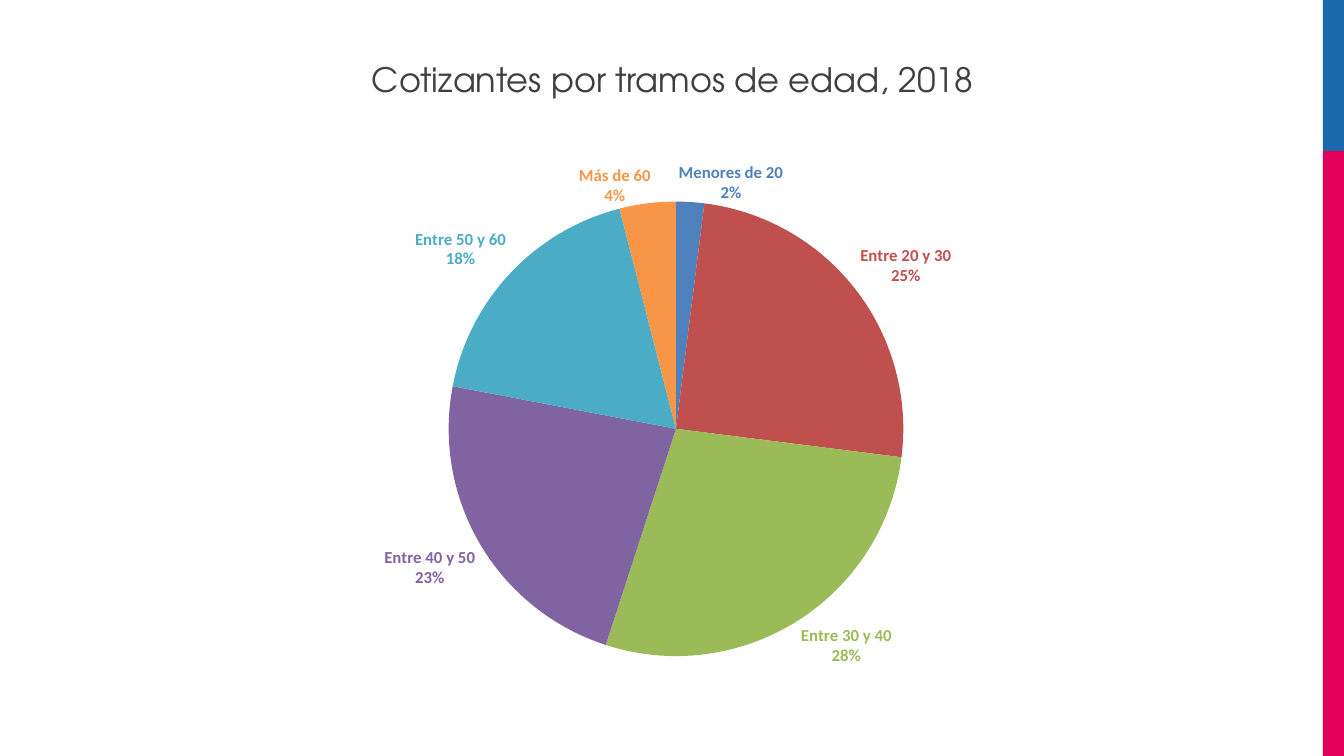
"""Build a slide with a pie chart of contributors by age bracket."""
from dataclasses import dataclass

from lxml import etree
from pptx import Presentation
from pptx import util as u
from pptx.chart import data as chart_data
from pptx.dml.color import RGBColor
from pptx.enum import chart as charts, shapes, text
from pptx.oxml import ns

COLORS = {
    "blue bar": "1A69AA", "pink bar": "E30058", "title": "404040",
    "blue": "4F81BD", "red": "C0504D", "green": "9BBB59",
    "purple": "8064A2", "teal": "4BACC6", "orange": "F79646",
}
CHART_WIDTH, CHART_HEIGHT = 9.45, 5.51
PIE_LEFT, PIE_TOP, PIE_SIZE = 2.51, 0.6, 4.51


@dataclass
class Bar:
    top: float
    height: float
    color: str


@dataclass
class Bracket:
    name: str
    percent: int
    color: str
    label_right: float = 0
    label_down: float = 0


BARS = [Bar(0, 1.5, "blue bar"), Bar(1.5, 6, "pink bar")]
BRACKETS = [
    Bracket("Menores de 20", 2, "blue", 0.4, 0.07),
    Bracket("Entre 20 y 30", 25, "red"),
    Bracket("Entre 30 y 40", 28, "green"),
    Bracket("Entre 40 y 50", 23, "purple"),
    Bracket("Entre 50 y 60", 18, "teal"),
    Bracket("Más de 60", 4, "orange", 0.04, 0.08),
]


def rgb(name: str) -> RGBColor:
    return RGBColor.from_string(COLORS[name])


def format_font(font, *, name: str, size: float, color: str, bold: bool = False) -> None:
    font.name = name
    font.size = u.Pt(size)
    font.bold = bold
    font.color.rgb = rgb(color)


def write_text(box, words: str, *, align=text.PP_ALIGN.CENTER, **font_format) -> None:
    frame = box.text_frame
    frame.word_wrap = True
    frame.vertical_anchor = text.MSO_ANCHOR.MIDDLE
    frame.margin_left = frame.margin_top = frame.margin_right = frame.margin_bottom = 0
    para = frame.paragraphs[0]
    para.alignment = align
    span = para.add_run()
    span.text = words
    format_font(span.font, **font_format)


def add_bar(page, bar: Bar) -> None:
    box = page.shapes.add_shape(
        shapes.MSO_SHAPE.RECTANGLE,
        u.Inches(13.12), u.Inches(bar.top), u.Inches(0.21), u.Inches(bar.height))
    box.shadow.inherit = False
    box.fill.solid()
    box.fill.fore_color.rgb = rgb(bar.color)
    box.line.fill.background()


def manual_layout(**settings):
    layout = etree.Element(ns.qn("c:layout"))
    manual = etree.SubElement(layout, ns.qn("c:manualLayout"))
    for tag, value in settings.items():
        etree.SubElement(manual, ns.qn(f"c:{tag}")).set("val", str(value))
    return layout


def place_plot(chart) -> None:
    plot_area = chart.plots[0]._element.getparent()
    for old_layout in plot_area.findall(ns.qn("c:layout")):
        plot_area.remove(old_layout)
    plot_area.insert(0, manual_layout(
        layoutTarget="inner", xMode="edge", yMode="edge",
        x=PIE_LEFT / CHART_WIDTH, y=PIE_TOP / CHART_HEIGHT,
        w=PIE_SIZE / CHART_WIDTH, h=PIE_SIZE / CHART_HEIGHT))


def format_slice(point, bracket: Bracket) -> None:
    point.format.fill.solid()
    point.format.fill.fore_color.rgb = rgb(bracket.color)
    point.format.line.fill.background()
    label = point.data_label
    format_font(label.font, name="Calibri", size=12, color=bracket.color, bold=True)
    label.position = charts.XL_LABEL_POSITION.OUTSIDE_END
    element = label._get_or_add_dLbl()
    for tag, value in {"showVal": "0", "showCatName": "1", "showPercent": "1"}.items():
        element.find(ns.qn(f"c:{tag}")).set("val", value)
    index = element.find(ns.qn("c:idx"))
    index.addnext(etree.Element(ns.qn("c:numFmt"), formatCode="0%", sourceLinked="0"))
    if bracket.label_right or bracket.label_down:
        index.addnext(manual_layout(x=bracket.label_right / CHART_WIDTH,
                                    y=bracket.label_down / CHART_HEIGHT))
    etree.SubElement(element, ns.qn("c:separator")).text = "\n"


def add_pie(page, brackets: list[Bracket]) -> None:
    figures = chart_data.CategoryChartData()
    figures.categories = [bracket.name for bracket in brackets]
    figures.add_series("Series 1", [bracket.percent for bracket in brackets])
    chart = page.shapes.add_chart(
        charts.XL_CHART_TYPE.PIE, u.Inches(1.94), u.Inches(1.4),
        u.Inches(CHART_WIDTH), u.Inches(CHART_HEIGHT), figures).chart
    chart.has_title = False
    chart.has_legend = False
    chart.font.name = "Calibri"
    chart.font.size = u.Pt(10)
    plot = chart.plots[0]
    plot.vary_by_categories = True
    place_plot(chart)
    for index, bracket in enumerate(brackets):
        format_slice(plot.series[0].points[index], bracket)
    for leader_lines in plot._element.iter(ns.qn("c:showLeaderLines")):
        leader_lines.set("val", "0")


def main() -> None:
    deck = Presentation()
    deck.slide_width, deck.slide_height = u.Inches(13.33), u.Inches(7.5)
    page = deck.slides.add_slide(deck.slide_layouts[5])
    for bar in BARS:
        add_bar(page, bar)
    title = page.shapes.title
    title.left, title.top = u.Inches(2.17), u.Inches(0.58)
    title.width, title.height = u.Inches(9), u.Inches(0.4)
    write_text(title, "Cotizantes por tramos de edad, 2018",
               name="TeX Gyre Adventor", size=24, color="title")
    add_pie(page, BRACKETS)
    deck.save("out.pptx")


if __name__ == "__main__":
    main()
